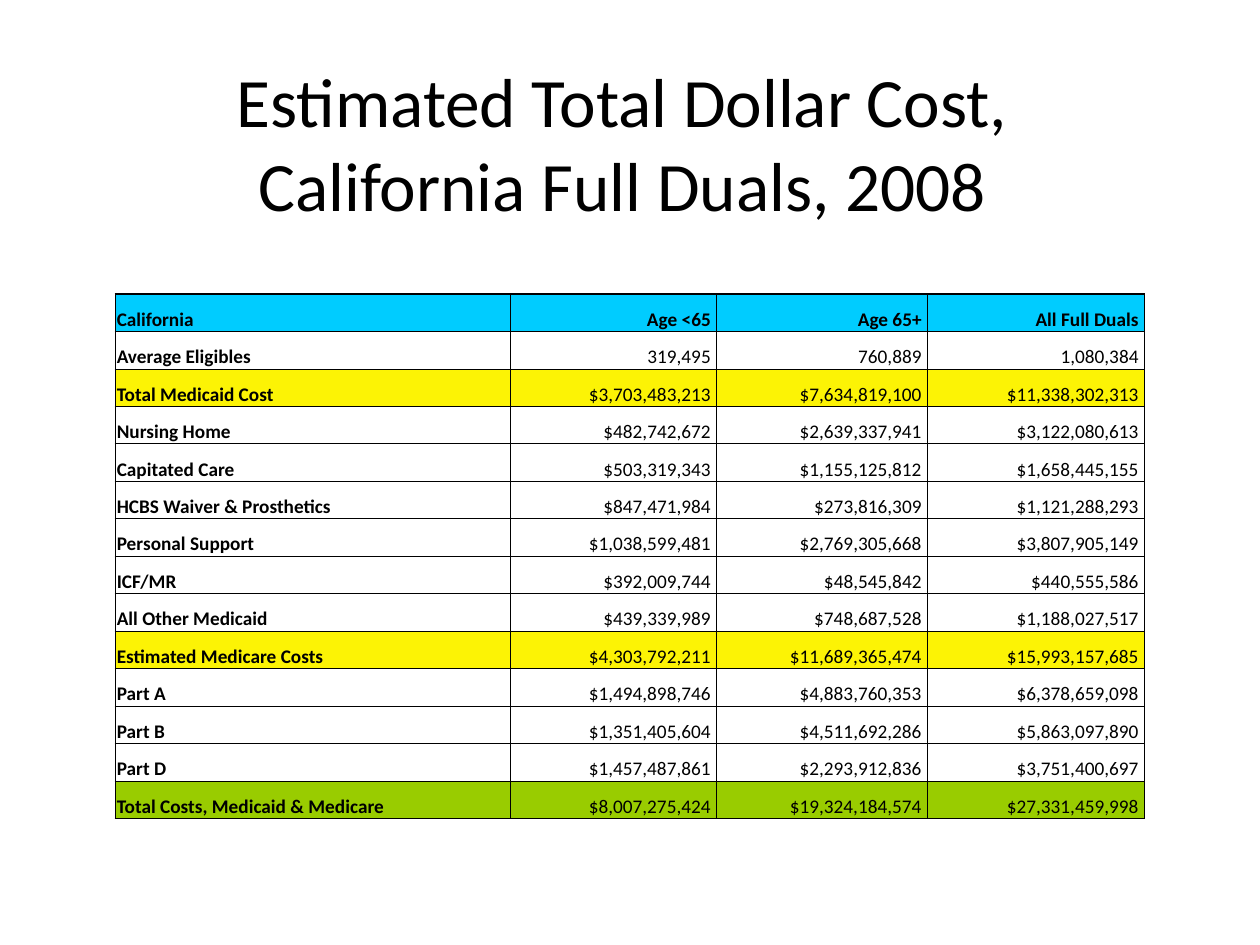
from dataclasses import dataclass

from pptx import Presentation
from pptx.dml.color import RGBColor
from pptx.enum import text
from pptx.oxml import ns
from pptx.util import Pt
from lxml import etree


@dataclass(frozen=True)
class Theme:
    """Colours, font, type sizes and line widths of the slide."""
    font: str = "Calibri"
    ink: str = "000000"
    header: str = "00CCFF"
    subtotal: str = "FCF305"
    total: str = "99CC00"
    title_size: float = 39.6
    cell_size: float = 11
    inner_line: float = 0.5
    outer_line: float = 1


THEME = Theme()
TITLE = "Estimated Total Dollar Cost, \nCalifornia Full Duals, 2008 "
COLUMN_WIDTHS = (225.5, 118, 120.5, 124)
ROWS = (
    ("California", "Age <65", "Age 65+", "All Full Duals"),
    ("Average Eligibles", "319,495", "760,889", "1,080,384"),
    ("Total Medicaid Cost", "$3,703,483,213", "$7,634,819,100", "$11,338,302,313"),
    ("Nursing Home", "$482,742,672", "$2,639,337,941", "$3,122,080,613"),
    ("Capitated Care", "$503,319,343", "$1,155,125,812", "$1,658,445,155"),
    ("HCBS Waiver & Prosthetics", "$847,471,984", "$273,816,309", "$1,121,288,293"),
    ("Personal Support", "$1,038,599,481", "$2,769,305,668", "$3,807,905,149"),
    ("ICF/MR", "$392,009,744", "$48,545,842", "$440,555,586"),
    ("All Other Medicaid", "$439,339,989", "$748,687,528", "$1,188,027,517"),
    ("Estimated Medicare Costs", "$4,303,792,211", "$11,689,365,474", "$15,993,157,685"),
    ("Part A", "$1,494,898,746", "$4,883,760,353", "$6,378,659,098"),
    ("Part B", "$1,351,405,604", "$4,511,692,286", "$5,863,097,890"),
    ("Part D", "$1,457,487,861", "$2,293,912,836", "$3,751,400,697"),
    ("Total Costs, Medicaid & Medicare", "$8,007,275,424", "$19,324,184,574", "$27,331,459,998"),
)
ROW_FILLS = {
    "California": THEME.header,
    "Total Medicaid Cost": THEME.subtotal,
    "Estimated Medicare Costs": THEME.subtotal,
    "Total Costs, Medicaid & Medicare": THEME.total,
}


def write(tf, content, size, align, bold=False):
    """Put one formatted paragraph into a text frame."""
    p = tf.paragraphs[0]
    p.text = content
    p.alignment = align
    for r in p.runs:
        r.font.name = THEME.font
        r.font.size = Pt(size)
        r.font.bold = bold
        r.font.color.rgb = RGBColor.from_string(THEME.ink)


def add_borders(cell, **widths):
    """Draw the cell's sides, given as L, R, T and B widths in points."""
    tc_pr = cell._tc.get_or_add_tcPr()
    for side, width in widths.items():
        ln = etree.SubElement(tc_pr, ns.qn(f"a:ln{side}"), w=str(Pt(width)))
        fill = etree.SubElement(ln, ns.qn("a:solidFill"))
        etree.SubElement(fill, ns.qn("a:srgbClr"), val=THEME.ink)


def format_cell(cell, fill):
    """Set the cell's margins, anchor and fill."""
    cell.margin_left = cell.margin_right = cell.margin_top = Pt(0.75)
    cell.margin_bottom = Pt(0)
    cell.vertical_anchor = text.MSO_ANCHOR.BOTTOM
    if fill:
        cell.fill.solid()
        cell.fill.fore_color.rgb = RGBColor.from_string(fill)
    else:
        cell.fill.background()


def place_title(s, left, top, width, height):
    """Move and fill the title placeholder."""
    sp = s.shapes.title
    sp.left, sp.top, sp.width, sp.height = map(Pt, (left, top, width, height))
    tf = sp.text_frame
    tf.auto_size = text.MSO_AUTO_SIZE.NONE
    tf.vertical_anchor = text.MSO_ANCHOR.MIDDLE
    write(tf, TITLE, THEME.title_size, text.PP_ALIGN.CENTER)


def place_cost_table(s, left, top, width, height):
    """Build the cost table with equal rows in the given box."""
    last_row, last_col = len(ROWS) - 1, len(COLUMN_WIDTHS) - 1
    table = s.shapes.add_table(
        len(ROWS), len(COLUMN_WIDTHS), *map(Pt, (left, top, width, height))
    ).table
    table.first_row = table.horz_banding = False
    for column, share in zip(table.columns, COLUMN_WIDTHS):
        column.width = Pt(width * share / sum(COLUMN_WIDTHS))
    for i, values in enumerate(ROWS):
        table.rows[i].height = Pt(height / len(ROWS))
        for j, value in enumerate(values):
            cell = table.cell(i, j)
            edges = {"L": j == 0, "R": j == last_col, "T": i == 0, "B": i == last_row}
            add_borders(cell, **{
                side: THEME.outer_line if outer else THEME.inner_line
                for side, outer in edges.items()
            })
            format_cell(cell, ROW_FILLS.get(values[0]))
            write(
                cell.text_frame,
                f" {value} " if j else value,
                THEME.cell_size,
                text.PP_ALIGN.RIGHT if j else text.PP_ALIGN.LEFT,
                bold=i == 0 or j == 0,
            )


def main():
    """Build the slide and save it."""
    prs = Presentation()
    prs.slide_width, prs.slide_height = Pt(720), Pt(540)
    s = prs.slides.add_slide(prs.slide_layouts[5])
    place_title(s, 36, 36, 648, 90)
    place_cost_table(s, 66, 168, 588, 300)
    prs.save("out.pptx")


if __name__ == "__main__":
    main()
